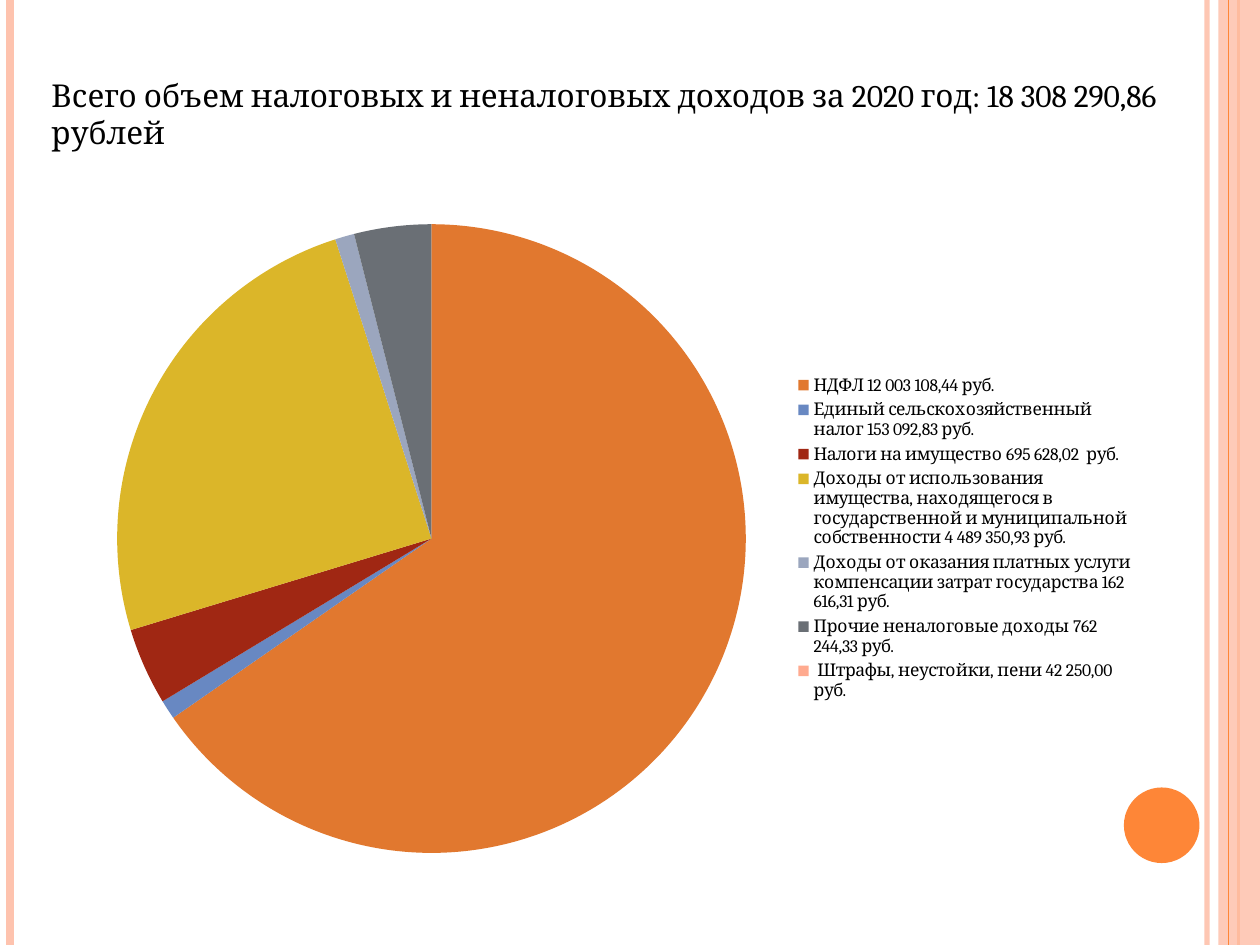
from dataclasses import dataclass

from pptx import Presentation, util as u
from pptx.chart.data import CategoryChartData
from pptx.dml.color import RGBColor
from pptx.enum import chart as charts, shapes
from pptx.oxml import parse_xml
from pptx.oxml.ns import nsdecls, qn

PEACH = RGBColor(0xFE, 0xC3, 0xAE)
ORANGE = RGBColor(0xFE, 0x86, 0x37)
BLACK = RGBColor(0, 0, 0)
FONT = "Cambria"
SLIDE_HEIGHT = 7.5


@dataclass
class Stripe:
    x: float
    width: float
    color: RGBColor
    opacity: int = 100


@dataclass
class Panel:
    preset: shapes.MSO_SHAPE
    box: tuple[float, float, float, float]
    color: RGBColor
    opacity: int = 100


@dataclass
class Income:
    label: str
    percent: int
    color: RGBColor


STRIPES = [
    Stripe(9.58, 3, PEACH, 93),
    Stripe(0.08, 4.5, PEACH),
    Stripe(9.83, 1.5, ORANGE),
]
EDGE_STRIPE = Stripe(9.75, 0.75, ORANGE)
SIDE_BAND = Panel(shapes.MSO_SHAPE.RECTANGLE, (9.67, 0, 0.33, SLIDE_HEIGHT), PEACH, 87)
PAGE_DISC = Panel(shapes.MSO_SHAPE.OVAL, (8.92, 6.25, 0.6, 0.6), ORANGE)
TITLE = "Всего объем налоговых и неналоговых доходов за 2020 год: 18 308 290,86 рублей"
INCOMES = [
    Income("НДФЛ 12 003 108,44 руб.", 66, RGBColor(0xE1, 0x78, 0x2F)),
    Income("Единый сельскохозяйственный налог 153 092,83 руб.", 1,
           RGBColor(0x68, 0x88, 0xC2)),
    Income("Налоги на имущество 695 628,02  руб.", 4, RGBColor(0xA0, 0x27, 0x13)),
    Income("Доходы от использования имущества, находящегося в государственной "
           "и муниципальной собственности 4 489 350,93 руб.", 25,
           RGBColor(0xDB, 0xB6, 0x29)),
    Income("Доходы от оказания платных услуги компенсации затрат государства "
           "162 616,31 руб.", 1, RGBColor(0x9B, 0xA6, 0xBE)),
    Income("Прочие неналоговые доходы 762 244,33 руб.", 4,
           RGBColor(0x6A, 0x6F, 0x75)),
    Income(" Штрафы, неустойки, пени 42 250,00 руб.", 0,
           RGBColor(0xFF, 0xAA, 0x8F)),
]
CHART_BOX = (0.55, 1.64, 8.56, 5.27)
PIE_BOX = (0.93, 1.78, 4.99, 4.99)
LEGEND_BOX = (6.28, 2.94, 2.75, 2.66)


def inches(box: tuple) -> list:
    return [u.Inches(length) for length in box]


def format_font(font, size: float) -> None:
    values = {"name": FONT, "size": u.Pt(size), "bold": False}
    for name, value in values.items():
        setattr(font, name, value)
    font.color.rgb = BLACK


def set_opacity(element, opacity: int) -> None:
    if opacity < 100:
        color = element.find(".//" + qn("a:srgbClr"))
        color.append(parse_xml(f'<a:alpha {nsdecls("a")} val="{opacity * 1000}"/>'))


def draw_stripe(slide, stripe: Stripe) -> None:
    line = slide.shapes.add_connector(
        shapes.MSO_CONNECTOR.STRAIGHT,
        *inches((stripe.x, 0, stripe.x, SLIDE_HEIGHT)))
    line.line.color.rgb = stripe.color
    line.line.width = u.Pt(stripe.width)
    properties = line.element.spPr
    set_opacity(properties, stripe.opacity)
    properties.append(parse_xml(f'<a:effectLst {nsdecls("a")}/>'))


def draw_panel(slide, panel: Panel) -> None:
    shape = slide.shapes.add_shape(panel.preset, *inches(panel.box))
    shape.shadow.inherit = False
    shape.fill.solid()
    shape.fill.fore_color.rgb = panel.color
    shape.line.fill.background()
    set_opacity(shape.element.spPr, panel.opacity)


def draw_title(slide) -> None:
    frame = slide.shapes.add_textbox(*inches((0.31, 0.55, 9.69, 0.71))).text_frame
    frame.word_wrap = True
    run = frame.paragraphs[0].add_run()
    run.text = TITLE
    format_font(run.font, 18)


def chart_layout(box: tuple, target: str):
    left, top, width, height = CHART_BOX
    fractions = {
        "x": (box[0] - left) / width,
        "y": (box[1] - top) / height,
        "w": box[2] / width,
        "h": box[3] / height,
    }
    modes = "".join(f'<c:{name}Mode val="edge"/>' for name in "xy")
    sizes = "".join(f'<c:{name} val="{value:.4f}"/>' for name, value in fractions.items())
    return parse_xml(f'<c:layout {nsdecls("c")}><c:manualLayout>{target}{modes}{sizes}'
                     "</c:manualLayout></c:layout>")


def draw_chart(slide) -> None:
    data = CategoryChartData()
    data.categories = [income.label for income in INCOMES]
    data.add_series("Series 1", [income.percent for income in INCOMES])
    chart = slide.shapes.add_chart(
        charts.XL_CHART_TYPE.PIE, *inches(CHART_BOX), data).chart
    chart.has_title = False
    format_font(chart.font, 10)
    plot = chart.plots[0]
    plot.vary_by_categories = True
    for index, income in enumerate(INCOMES):
        point = plot.series[0].points[index]
        point.format.fill.solid()
        point.format.fill.fore_color.rgb = income.color
        point.format.line.fill.background()
    chart.has_legend = True
    legend = chart.legend
    legend.position = charts.XL_LEGEND_POSITION.RIGHT
    legend.include_in_layout = True
    format_font(legend.font, 10)

    plot_area = chart.element.find(".//" + qn("c:plotArea"))
    legend_area = chart.element.find(".//" + qn("c:legend"))
    for area in (plot_area, legend_area):
        for layout in area.findall(qn("c:layout")):
            area.remove(layout)
    plot_area.insert(0, chart_layout(PIE_BOX, '<c:layoutTarget val="inner"/>'))
    legend_area.find(qn("c:legendPos")).addnext(chart_layout(LEGEND_BOX, ""))


def main() -> None:
    presentation = Presentation()
    presentation.slide_width = u.Inches(10)
    presentation.slide_height = u.Inches(SLIDE_HEIGHT)
    slide = presentation.slides.add_slide(presentation.slide_layouts[6])
    for stripe in STRIPES:
        draw_stripe(slide, stripe)
    draw_panel(slide, SIDE_BAND)
    draw_stripe(slide, EDGE_STRIPE)
    draw_panel(slide, PAGE_DISC)
    draw_title(slide)
    draw_chart(slide)
    presentation.save("out.pptx")


if __name__ == "__main__":
    main()
